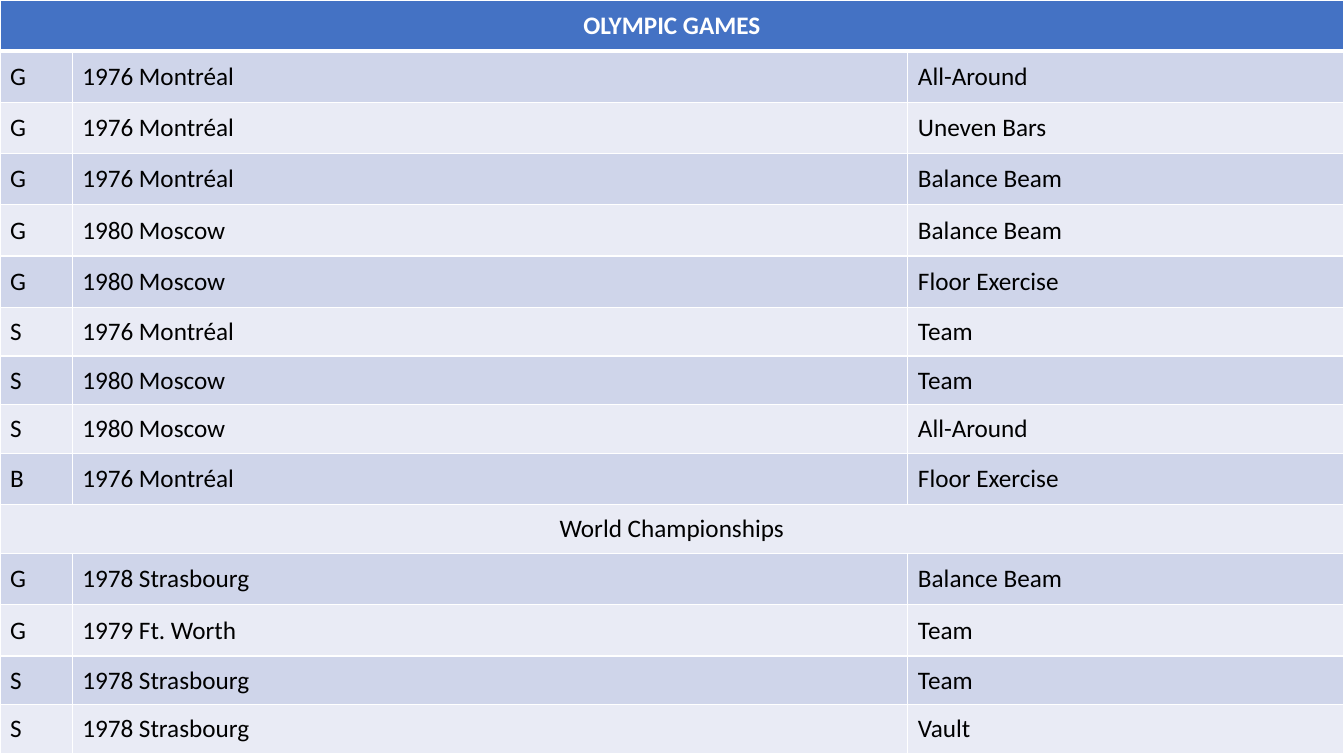
"""Build a slide with one table of gymnastics medals."""
from lxml import etree
from pptx import Presentation
from pptx import util as u
from pptx.dml.color import RGBColor
from pptx.enum import text as t
from pptx.oxml.ns import qn

ROWS = [
    ("OLYMPIC GAMES",),
    ("G", "1976 Montréal", "All-Around"),
    ("G", "1976 Montréal", "Uneven Bars"),
    ("G", "1976 Montréal", "Balance Beam"),
    ("G", "1980 Moscow", "Balance Beam"),
    ("G", "1980 Moscow", "Floor Exercise"),
    ("S", "1976 Montréal", "Team"),
    ("S", "1980 Moscow", "Team"),
    ("S", "1980 Moscow", "All-Around"),
    ("B", "1976 Montréal", "Floor Exercise"),
    ("World Championships",),
    ("G", "1978 Strasbourg", "Balance Beam"),
    ("G", "1979 Ft. Worth", "Team"),
    ("S", "1978 Strasbourg", "Team"),
    ("S", "1978 Strasbourg", "Vault"),
]
COLS = (1.82, 21.06, 10.98)
TALL, LOW = 1.29, 1.23
COLORS = {"head": "4472C4", "odd": "CFD5EA", "even": "E9EBF5",
          "white": "FFFFFF", "black": "000000"}


def write(cell, words, color="black", bold=False, center=False):
    cell.vertical_anchor = t.MSO_ANCHOR.MIDDLE
    para = cell.text_frame.paragraphs[0]
    para.alignment = t.PP_ALIGN.CENTER if center else t.PP_ALIGN.LEFT
    run = para.add_run()
    run.text = words
    font = run.font
    font.name, font.size, font.bold = "Calibri", u.Pt(18), bold
    font.color.rgb = RGBColor.from_string(COLORS[color])


def border(cell, top=1, bottom=1):
    props = cell._tc.get_or_add_tcPr()
    for side, width in (("L", 1), ("R", 1), ("T", top), ("B", bottom)):
        line = etree.SubElement(props, qn(f"a:ln{side}"), w=str(u.Pt(width)))
        fill = etree.SubElement(line, qn("a:solidFill"))
        etree.SubElement(fill, qn("a:srgbClr"), val=COLORS["white"])


def paint(cell, color):
    cell.fill.solid()
    cell.fill.fore_color.rgb = RGBColor.from_string(COLORS[color])


def main():
    deck = Presentation()
    deck.slide_width, deck.slide_height = u.Cm(33.87), u.Cm(19.05)
    slide = deck.slides.add_slide(deck.slide_layouts[6])
    highs = [LOW if row[0] in ("S", "World Championships") else TALL
             for row in ROWS]
    frame = slide.shapes.add_table(len(ROWS), len(COLS), 0, 0,
                                   u.Cm(sum(COLS)), u.Cm(sum(highs)))
    medals = frame.table
    for col, wide in zip(medals.columns, COLS):
        col.width = u.Cm(wide)

    for i, (row, high) in enumerate(zip(ROWS, highs)):
        medals.rows[i].height = u.Cm(high)
        head = i == 0
        band = "head" if head else "odd" if i % 2 else "even"
        for j in range(len(COLS)):
            cell = medals.cell(i, j)
            border(cell, top=3 if i == 1 else 1, bottom=3 if head else 1)
            paint(cell, band)
        span = len(row) == 1
        if span:
            medals.cell(i, 0).merge(medals.cell(i, len(COLS) - 1))
        for j, words in enumerate(row):
            write(medals.cell(i, j), words, bold=head, center=span,
                  color="white" if head else "black")
    deck.save("out.pptx")


if __name__ == "__main__":
    main()
